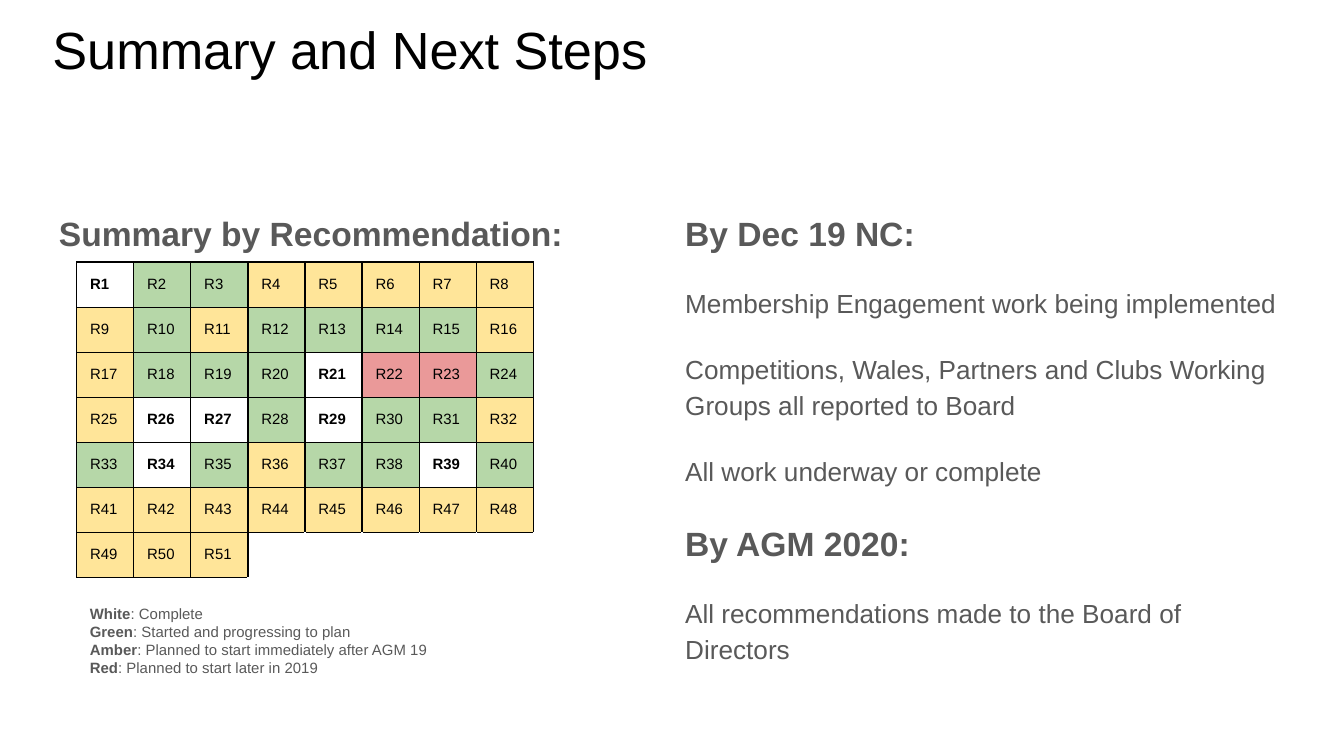
from lxml import etree
from pptx import Presentation
from pptx import util as u
from pptx.dml.color import RGBColor
from pptx.enum import text
from pptx.oxml import ns

WIDTH = u.Inches(10)
HEIGHT = WIDTH * 9 // 16
FONT = "Arial"
BLACK = RGBColor(0x00, 0x00, 0x00)
WHITE = RGBColor(0xFF, 0xFF, 0xFF)
GREY = RGBColor(0x59, 0x59, 0x59)
GREEN = RGBColor(0xB6, 0xD7, 0xA8)
AMBER = RGBColor(0xFF, 0xE5, 0x99)
RED = RGBColor(0xEA, 0x99, 0x99)

# One letter per recommendation, in order; a dot is an unused cell
STATUS_ROWS = [
    "WGGAAAAA",
    "AGAGGGGA",
    "AGGGWRRG",
    "AWWGWGGA",
    "GWGAGGWG",
    "AAAAAAAA",
    "AAA.....",
]
STATUS_FILLS = {"W": WHITE, "G": GREEN, "A": AMBER, "R": RED, ".": WHITE}

LEGEND = [
    ("White", ": Complete"),
    ("Green", ": Started and progressing to plan"),
    ("Amber", ": Planned to start immediately after AGM 19"),
    ("Red", ": Planned to start later in 2019"),
]

# Text and whether it is a heading
NEXT_STEPS = [
    ("By Dec 19 NC:", True),
    ("Membership Engagement work being implemented", False),
    ("Competitions, Wales, Partners and Clubs Working Groups all reported to Board", False),
    ("All work underway or complete", False),
    ("By AGM 2020:", True),
    ("All recommendations made to the Board of Directors", False),
]


def format_run(run, size, color, bold=False):
    run.font.name = FONT
    run.font.size = u.Pt(size)
    run.font.bold = bold
    run.font.color.rgb = color


def prepare_frame(frame):
    frame.word_wrap = True
    frame.auto_size = text.MSO_AUTO_SIZE.NONE
    frame.vertical_anchor = text.MSO_ANCHOR.TOP
    frame.margin_left = frame.margin_right = u.Inches(0.1)
    frame.margin_top = frame.margin_bottom = u.Inches(0.1)


def set_title(slide, title):
    shape = slide.shapes.title
    shape.left, shape.top = u.Inches(0.29), u.Inches(0.03)
    shape.width, shape.height = u.Inches(9.32), u.Inches(0.63)
    prepare_frame(shape.text_frame)
    shape.text_frame.text = title
    paragraph = shape.text_frame.paragraphs[0]
    paragraph.alignment = text.PP_ALIGN.LEFT
    format_run(paragraph.runs[0], 28, BLACK)


def add_text(slide, left, top, width, height, paragraphs, line_spacing=1.0, space_before=0):
    """Each paragraph is a list of (text, size, bold) runs."""
    shape = slide.shapes.add_textbox(*map(u.Inches, (left, top, width, height)))
    frame = shape.text_frame
    prepare_frame(frame)
    for index, runs in enumerate(paragraphs):
        paragraph = frame.add_paragraph() if index else frame.paragraphs[0]
        paragraph.line_spacing = line_spacing
        if index:
            paragraph.space_before = u.Pt(space_before)
        for words, size, bold in runs:
            run = paragraph.add_run()
            run.text = words
            format_run(run, size, GREY, bold)


def set_borders(cell, left, right, top, bottom):
    properties = cell._tc.get_or_add_tcPr()
    for side, color in zip("LRTB", (left, right, top, bottom)):
        line = etree.SubElement(properties, ns.qn(f"a:ln{side}"), w=str(u.Pt(0.75)))
        fill = etree.SubElement(line, ns.qn("a:solidFill"))
        etree.SubElement(fill, ns.qn("a:srgbClr"), val=str(color))


def fill_cell(cell, status, number, after_used):
    used = status != "."
    if used:
        set_borders(cell, BLACK, BLACK, BLACK, BLACK)
    else:
        set_borders(cell, BLACK if after_used else WHITE, WHITE, BLACK, WHITE)
    cell.fill.solid()
    cell.fill.fore_color.rgb = STATUS_FILLS[status]
    margin = u.Inches(0.1 if used else 0)
    cell.margin_left = cell.margin_right = margin
    cell.margin_top = cell.margin_bottom = margin
    if used:
        cell.text_frame.text = f"R{number}"
        format_run(cell.text_frame.paragraphs[0].runs[0], 8, BLACK, status == "W")


def add_status_table(slide, left, top, width, height):
    row_count, column_count = len(STATUS_ROWS), len(STATUS_ROWS[0])
    table = slide.shapes.add_table(
        row_count, column_count, *map(u.Inches, (left, top, width, height))
    ).table
    table.first_row = table.horz_banding = False
    for row, statuses in enumerate(STATUS_ROWS):
        for column, status in enumerate(statuses):
            after_used = column > 0 and statuses[column - 1] != "."
            number = row * column_count + column + 1
            fill_cell(table.cell(row, column), status, number, after_used)


def main():
    presentation = Presentation()
    presentation.slide_width, presentation.slide_height = WIDTH, HEIGHT
    slide = presentation.slides.add_slide(presentation.slide_layouts[5])
    set_title(slide, "Summary and Next Steps")

    # Right column: next steps
    steps = [[(words, 18 if heading else 14, heading)] for words, heading in NEXT_STEPS]
    add_text(slide, 5, 1.44, 4.66, 3.55, steps, line_spacing=1.15, space_before=16)

    # Left column: status grid, its legend and its heading
    add_status_table(slide, 0.57, 1.95, 3.4, 2.35)
    legend = [[(name, 8, True), (meaning, 8, False)] for name, meaning in LEGEND]
    add_text(slide, 0.57, 4.4, 3.4, 0.78, legend)
    add_text(slide, 0.34, 1.44, 4.66, 0.51,
             [[("Summary by Recommendation:", 18, True)]], line_spacing=1.15)

    presentation.save("out.pptx")


if __name__ == "__main__":
    main()
